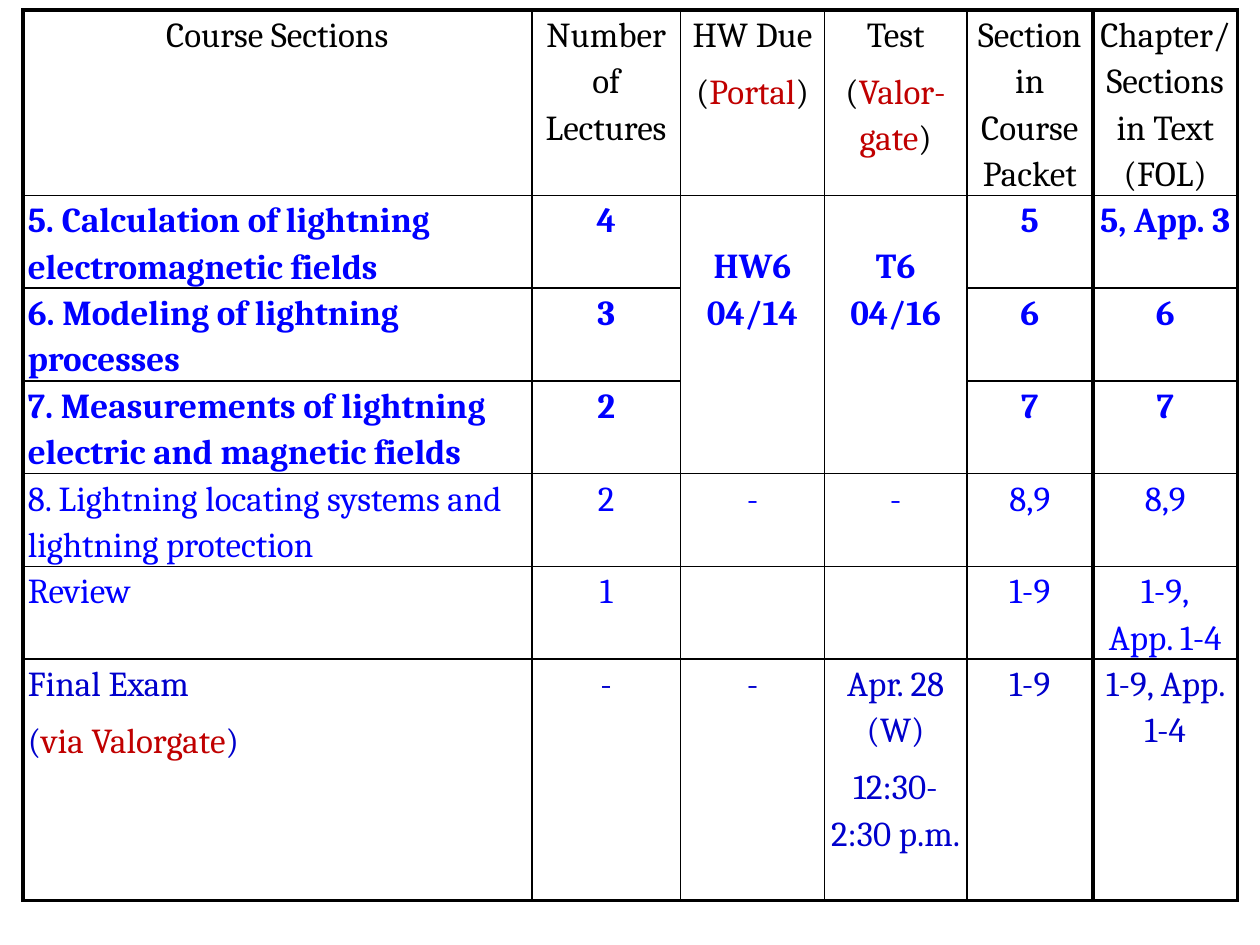
from lxml import etree
from pptx import Presentation
from pptx import util as u
from pptx.dml.color import RGBColor
from pptx.enum import text
from pptx.oxml import ns

MID, LEFT = text.PP_ALIGN.CENTER, text.PP_ALIGN.LEFT
THIN, THICK = 1, 2.25
INK, RED, BLUE, NAVY = "000000", "C00000", "0000FF", "0000CC"
COLS = [10.26, 3, 2.9, 2.87, 2.54, 2.92]
ROWS = [3.71] + [1.87] * 5 + [4.87]
HEAD = {"hue": INK, "bold": False, "gap": 6}
BOLD = {"hue": BLUE, "bold": True, "gap": 0}
PLAIN = {"hue": BLUE, "bold": False, "gap": 0}
LAST = {"hue": NAVY, "bold": False, "gap": 6}
PLAN = [
    (HEAD, ["Course Sections", "Number of Lectures", "HW Due\n(*Portal*)",
            "Test\n(*Valor-gate*)", "Section in Course Packet",
            "Chapter/Sections in Text (FOL)"]),
    (BOLD, ["5. Calculation of lightning electromagnetic fields", "4",
            "HW6\n04/14", "T6\n04/16", "5", "5, App. 3"]),
    (BOLD, ["6. Modeling of lightning processes", "3", "", "", "6", "6"]),
    (BOLD, ["7. Measurements of lightning electric and magnetic fields", "2",
            "", "", "7", "7"]),
    (PLAIN, ["8. Lightning locating systems and lightning protection", "2",
             "-", "-", "8,9", "8,9"]),
    (PLAIN, ["Review", "1", "", "", "1-9", "1-9,\nApp. 1-4"]),
    (LAST, ["Final Exam\n(*via Valorgate*)", "-", "-",
            "Apr. 28 (W)\n12:30-2:30 p.m.", "1-9", "1-9, App. 1-4"]),
]


def paint(code):
    return RGBColor.from_string(code)


def apply(item, vals):
    for key, val in vals.items():
        setattr(item, key, val)


class Deck:
    font = {"name": "Cambria", "size": u.Pt(20)}
    pads = {"margin_left": u.Cm(0.1), "margin_right": u.Cm(0.1),
            "margin_top": 0, "margin_bottom": 0}

    def __init__(self, wide, high):
        self.prs = Presentation()
        apply(self.prs, {"slide_width": u.Cm(wide), "slide_height": u.Cm(high)})
        self.slide = self.prs.slides.add_slide(self.prs.slide_layouts[6])

    def grid(self, left, top, cols, rows):
        frame = self.slide.shapes.add_table(
            len(rows), len(cols), u.Cm(left), u.Cm(top),
            u.Cm(sum(cols)), u.Cm(sum(rows)))
        table = frame.table
        apply(table, {"first_row": False, "horz_banding": False})
        for col, size in zip(table.columns, cols):
            col.width = u.Cm(size)
        for row, size in zip(table.rows, rows):
            row.height = u.Cm(size)
        return table

    def label(self, cell, words, look, align):
        apply(cell, self.pads)
        cell.fill.background()
        for num, line in enumerate(words.split("\n")):
            paras = cell.text_frame.paragraphs
            para = cell.text_frame.add_paragraph() if num else paras[0]
            apply(para, {"alignment": align, "line_spacing": 1.15,
                         "space_before": u.Pt(look["gap"])})
            apply(para.font, self.font)
            for turn, part in enumerate(line.split("*")):
                if part:
                    run = para.add_run()
                    run.text = part
                    apply(run.font, {**self.font, "bold": look["bold"]})
                    run.font.color.rgb = paint(RED if turn % 2 else look["hue"])

    def edge(self, cell, sides):
        props = cell._tc.get_or_add_tcPr()
        for spot, (side, size) in enumerate(sides.items()):
            line = etree.Element(ns.qn(f"a:ln{side}"), w=str(u.Pt(size)))
            fill = etree.SubElement(line, ns.qn("a:solidFill"))
            etree.SubElement(fill, ns.qn("a:srgbClr"), val=INK)
            props.insert(spot, line)

    def save(self):
        self.prs.save("out.pptx")


def main():
    deck = Deck(25.4, 19.05)
    table = deck.grid(0.46, 0.2, COLS, ROWS)
    end, base = len(COLS), len(ROWS)
    bars = {0, end - 1, end}
    for y, (look, words) in enumerate(PLAN):
        for x, word in enumerate(words):
            cell = table.cell(y, x)
            deck.label(cell, word, look, MID if x or not y else LEFT)
            deck.edge(cell, {
                "L": THICK if x in bars else THIN,
                "R": THICK if x + 1 in bars else THIN,
                "T": THIN if y else THICK,
                "B": THICK if y + 1 == base else THIN})
    for x in (2, 3):
        table.cell(1, x).merge(table.cell(3, x))
        table.cell(1, x).margin_top = u.Cm(0.93)
    deck.save()


if __name__ == "__main__":
    main()
